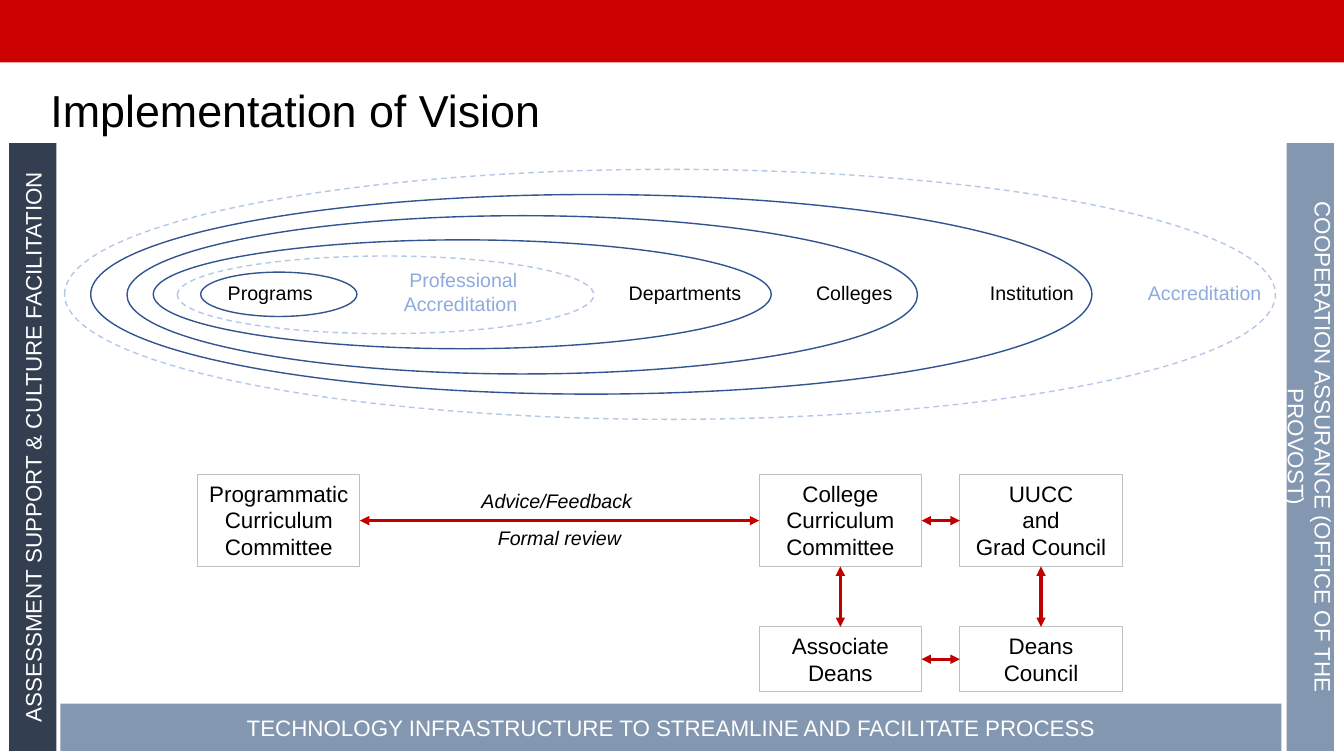
from lxml import etree
from pptx import Presentation
from pptx.dml.color import RGBColor
from pptx.enum import dml, shapes, text
from pptx.oxml.ns import qn
from pptx.util import Inches, Pt

BLACK = RGBColor(0, 0, 0)
WHITE = RGBColor(255, 255, 255)
BANNER_RED = RGBColor(0xCD, 0x00, 0x02)
ARROW_RED = RGBColor(0xC0, 0x00, 0x00)
BOX_GREY = RGBColor(0xBF, 0xBF, 0xBF)
NAVY = RGBColor(0x33, 0x3F, 0x50)
SLATE = RGBColor(0x84, 0x97, 0xB0)
RING_BLUE = RGBColor(0x32, 0x54, 0x91)
PALE_BLUE = RGBColor(0xB4, 0xC7, 0xE7)
LABEL_BLUE = RGBColor(0x8F, 0xAA, 0xDC)
RECT, OVAL = shapes.MSO_SHAPE.RECTANGLE, shapes.MSO_SHAPE.OVAL
LEFT, CENTER, RIGHT = text.PP_ALIGN.LEFT, text.PP_ALIGN.CENTER, text.PP_ALIGN.RIGHT
MIDDLE = text.MSO_ANCHOR.MIDDLE

TITLE = "Implementation of Vision"
# text, area (left, top, width, height), rotation, fill, inset
FRAME_BARS = [
    ("ASSESSMENT SUPPORT & CULTURE FACILITATION", (-2.69, 4.2, 6.03, 0.47), 270, NAVY, 0),
    ("TECHNOLOGY INFRASTRUCTURE TO STREAMLINE AND FACILITATE PROCESS",
     (0.6, 6.98, 12.11, 0.47), 0, SLATE, 0.1),
    ("COOPERATION ASSURANCE (OFFICE OF THE PROVOST)", (9.98, 4.2, 6.03, 0.47), 90, SLATE, 0),
]
# label, label area, alignment, ellipse area, is external accreditation
RINGS = [
    ("Programs", (2.16, 2.74, 1.22, 0.34), LEFT, (1.99, 2.7, 1.55, 0.44), False),
    ("Departments", (5.93, 2.74, 1.52, 0.34), RIGHT, (1.52, 2.38, 6.13, 1.08), False),
    ("Colleges", (7.73, 2.74, 1.22, 0.34), RIGHT, (1.26, 2.14, 7.84, 1.57), False),
    ("Institution", (9.33, 2.74, 1.42, 0.34), RIGHT, (0.9, 1.93, 9.93, 1.98), False),
    ("Accreditation", (10.99, 2.74, 1.62, 0.34), RIGHT, (0.64, 1.68, 12.01, 2.48), True),
    ("Professional\nAccreditation", (3.64, 2.61, 1.59, 0.57), RIGHT,
     (1.76, 2.54, 4.13, 0.77), True),
]
COLUMNS = [1.96, 7.53, 9.52]
ROWS = [(4.71, 0.91), (6.22, 0.64)]  # top, height
BOX_WIDTH = 1.61
# text, column, row
GROUPS = {
    "program": ("Programmatic\nCurriculum\nCommittee", 0, 0),
    "college": ("College\nCurriculum\nCommittee", 1, 0),
    "council": ("UUCC\nand\nGrad Council", 2, 0),
    "associates": ("Associate\nDeans", 1, 1),
    "deans": ("Deans\nCouncil", 2, 1),
}
ACROSS, DOWN = (3, 1), (2, 0)  # connection sites at start and end
LINKS = [("program", "college", ACROSS), ("college", "council", ACROSS),
         ("associates", "deans", ACROSS), ("college", "associates", DOWN),
         ("council", "deans", DOWN)]
LINK_NOTES = [("Advice/Feedback ", 4.8), ("Formal review", 5.17)]

prs = Presentation()
prs.slide_width, prs.slide_height = Inches(13.33), Inches(7.5)
slide = prs.slides.add_slide(prs.slide_layouts[5])


def inches(area):
    return [Inches(length) for length in area]


def write(frame, wording, size, color, align, italic=None):
    for i, line in enumerate(wording.split("\n")):
        paragraph = frame.paragraphs[0] if i == 0 else frame.add_paragraph()
        paragraph.alignment = align
        run = paragraph.add_run()
        run.text = line
        run.font.name, run.font.size, run.font.italic = "Arial", Pt(size), italic
        run.font.color.rgb = color


def add_figure(kind, area, fill=None, line=None, weight=1):
    figure = slide.shapes.add_shape(kind, *inches(area))
    figure.shadow.inherit = False
    if fill is None:
        figure.fill.background()
    else:
        figure.fill.solid()
        figure.fill.fore_color.rgb = fill
    if line is None:
        figure.line.fill.background()
    else:
        figure.line.color.rgb = line
        figure.line.width = Pt(weight)
    return figure


def add_label(wording, area, color, align, italic=None):
    frame = slide.shapes.add_textbox(*inches(area)).text_frame
    frame.word_wrap = True
    write(frame, wording, 14, color, align, italic)


def add_double_arrow(start, end, sites):
    arrow = slide.shapes.add_connector(shapes.MSO_CONNECTOR.STRAIGHT, 0, 0, 0, 0)
    arrow.begin_connect(start, sites[0])
    arrow.end_connect(end, sites[1])
    arrow.line.color.rgb = ARROW_RED
    arrow.line.width = Pt(2.25)
    for tip in ("a:headEnd", "a:tailEnd"):
        etree.SubElement(arrow.line._get_or_add_ln(), qn(tip), type="triangle")
    etree.SubElement(arrow._element.spPr, qn("a:effectLst"))


add_figure(RECT, (0, 0, 13.33, 0.62), BANNER_RED)

title = slide.shapes.title
title.left, title.top, title.width, title.height = inches((0.4, 0.4, 12.81, 1.45))
title.text_frame.auto_size = text.MSO_AUTO_SIZE.NONE
title.text_frame.vertical_anchor = MIDDLE
write(title.text_frame, TITLE, 32, BLACK, LEFT)
title.text_frame.paragraphs[0].line_spacing = 0.9

for wording, area, rotation, fill, inset in FRAME_BARS:
    bar = add_figure(RECT, area, fill)
    bar.rotation = rotation
    frame = bar.text_frame
    frame.word_wrap = True
    frame.vertical_anchor = MIDDLE
    frame.margin_left = frame.margin_right = Inches(inset)
    frame.margin_top = frame.margin_bottom = Inches(inset / 2)
    write(frame, wording, 16, WHITE, CENTER)

for wording, label_area, align, ring_area, external in RINGS:
    ring = add_figure(OVAL, ring_area, line=PALE_BLUE if external else RING_BLUE)
    if external:
        ring.line.dash_style = dml.MSO_LINE.DASH
    add_label(wording, label_area, LABEL_BLUE if external else BLACK, align)

boxes = {}
for key, (wording, column, row) in GROUPS.items():
    top, height = ROWS[row]
    box = add_figure(RECT, (COLUMNS[column], top, BOX_WIDTH, height),
                     line=BOX_GREY, weight=0.75)
    box.text_frame.word_wrap = False
    box.text_frame.vertical_anchor = text.MSO_ANCHOR.TOP
    write(box.text_frame, wording, 16, BLACK, CENTER)
    boxes[key] = box

for start, end, sites in LINKS:
    add_double_arrow(boxes[start], boxes[end], sites)
for wording, top in LINK_NOTES:
    add_label(wording, (4.58, top, 1.94, 0.34), BLACK, CENTER, italic=True)

prs.save("out.pptx")
